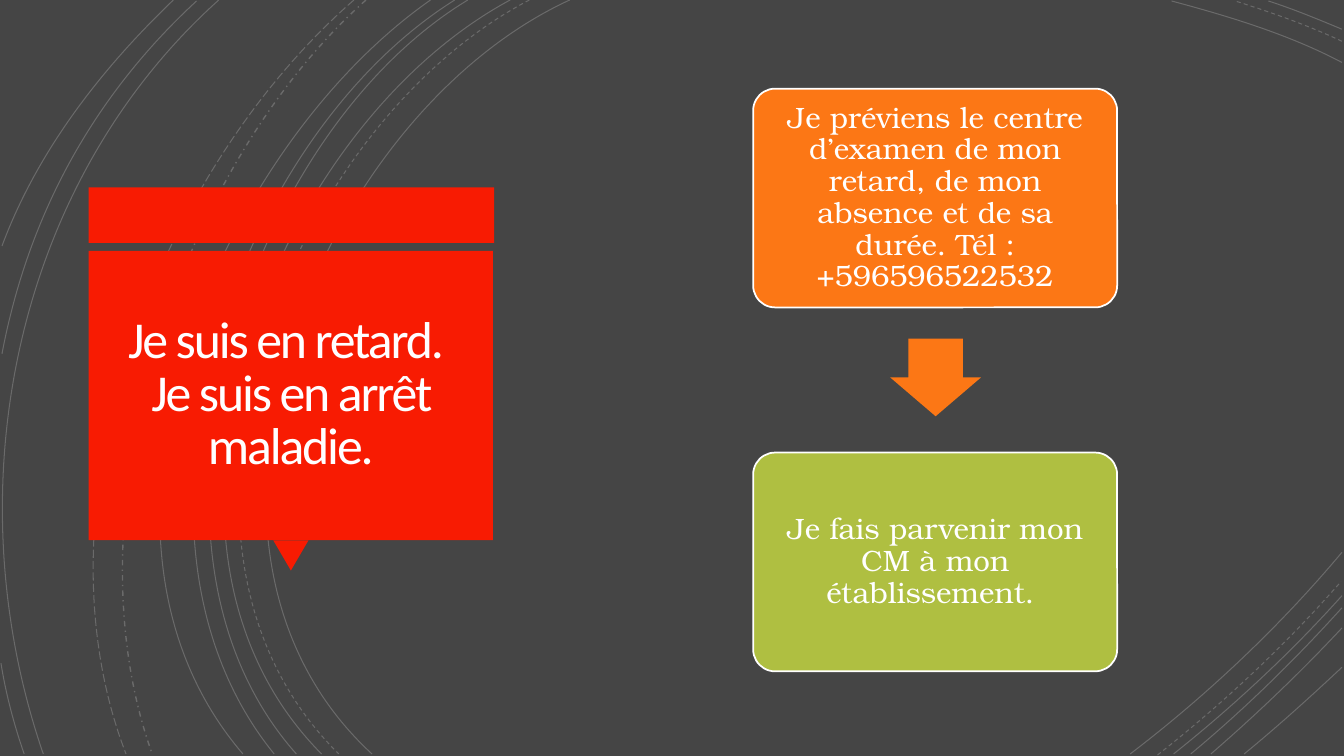
"""Build the slide on being late or on sick leave: a red title and two steps."""
from typing import NamedTuple

import pptx
import pptx.dml.color
import pptx.enum.dml
import pptx.enum.shapes
import pptx.enum.text
import pptx.oxml.ns
import pptx.util
from lxml import etree
from pptx.shapes.autoshape import Shape
from pptx.slide import Slide

Inches = pptx.util.Inches
Pt = pptx.util.Pt
qn = pptx.oxml.ns.qn
SHAPE = pptx.enum.shapes.MSO_SHAPE
DASH = pptx.enum.dml.MSO_LINE

COLORS = {
    "background": "454545",
    "white": "FFFFFF",
    "title": "FFFEFF",
    "red": "F81B02",
    "orange": "FC7715",
    "green": "AFBF41",
}


class Arc(NamedTuple):
    """A Bezier curve: start, two controls and end, in inches."""
    points: tuple[tuple[float, float], ...]
    dash: DASH = DASH.SOLID
    width: float = 0.75


class Block(NamedTuple):
    """A filled preset shape, measured in inches."""
    kind: SHAPE
    left: float
    top: float
    width: float
    height: float
    fill: str
    adjustments: tuple[float, ...] = ()
    rotation: float = 0
    outlined: bool = False


class Step(NamedTuple):
    """One rounded box of the procedure."""
    text: str
    fill: str


ARCS = [
    Arc(((5.65, 0), (3.15, 1.15), (1.43, 5.4), (3.69, 7.48))),
    Arc(((13.31, 0.62), (12.78, 0.34), (12.18, 0.16), (11.62, 0.01))),
    Arc(((11.21, 7.48), (11.97, 6.9), (12.69, 6.22), (13.31, 5.48))),
    Arc(((5.25, 0), (2.85, 1.25), (1.23, 5.37), (3.36, 7.48)), DASH.DASH),
    Arc(((13.31, 0.41), (12.97, 0.25), (12.6, 0.12), (12.25, 0.01)), DASH.DASH),
    Arc(((11.48, 7.49), (12.13, 6.98), (12.75, 6.4), (13.3, 5.77)), DASH.DASH),
    Arc(((5.06, 0), (2.7, 1.27), (1.1, 5.37), (3.19, 7.48))),
    Arc(((13.31, 0.29), (13.07, 0.19), (12.83, 0.09), (12.58, 0.01))),
    Arc(((11.64, 7.48), (12.23, 7.01), (12.8, 6.48), (13.31, 5.91))),
    Arc(((4.64, 0), (2.44, 1.33), (1.1, 5.41), (2.94, 7.48))),
    Arc(((11.81, 7.48), (12.34, 7.04), (12.84, 6.55), (13.31, 6.03))),
    Arc(((4.51, 0), (2.31, 1.38), (0.97, 5.33), (2.72, 7.48))),
    Arc(((12.01, 7.48), (12.46, 7.09), (12.9, 6.67), (13.31, 6.23))),
    Arc(((4.27, 0), (2.17, 1.47), (0.53, 5.29), (2.41, 7.48))),
    Arc(((12.34, 7.48), (12.67, 7.21), (12.99, 6.92), (13.31, 6.62))),
    Arc(((3.63, 0), (1.76, 1.66), (0.65, 5.09), (1.51, 7.48)), DASH.DASH_DOT, 1),
    Arc(((3.51, 0), (1.57, 1.69), (0.29, 4.99), (1.25, 7.48)), DASH.LONG_DASH),
    Arc(((2.17, 0), (0.11, 1.85), (-0.46, 4.9), (0.43, 7.48))),
    Arc(((1.95, 0.01), (0.92, 0.96), (0.28, 2.14), (0.02, 3.51))),
    Arc(((0.01, 6.58), (0.06, 6.89), (0.14, 7.19), (0.24, 7.48))),
    Arc(((1.72, 0), (1, 0.69), (0.37, 1.5), (0.02, 2.44))),
]

TITLE_BAND = Block(SHAPE.RECTANGLE, 0.88, 1.86, 4.02, 0.55, "red")
TITLE_POINTER = Block(SHAPE.ISOSCELES_TRIANGLE, 2.71, 5.36, 0.35, 0.3, "red", rotation=180)
TITLE_BOX = Block(SHAPE.RECTANGLE, 0.88, 2.49, 4.01, 2.87, "red")
TITLE = "Je suis en retard. \vJe suis en arrêt maladie."

STEPS = [
    Step("Je préviens le centre d’examen de mon retard, de mon absence et de sa durée. "
         "Tél : +596596522532", "orange"),
    Step("Je fais parvenir mon CM à mon établissement. ", "green"),
]
STEP_TOP, STEP_PITCH = 0.88, 3.61
ARROW = Block(SHAPE.DOWN_ARROW, 8.83, 3.36, 0.9, 0.77, "orange", (0.6, 0.5))


def rgb(name: str) -> pptx.dml.color.RGBColor:
    """Return the named colour."""
    return pptx.dml.color.RGBColor.from_string(COLORS[name])


def draw_arc(slide: Slide, arc: Arc) -> Shape:
    """Draw a faint curved line."""
    start, *rest = [(Inches(x), Inches(y)) for x, y in arc.points]
    builder = slide.shapes.build_freeform(*start)
    builder.add_line_segments(rest, close=False)
    sp = builder.convert_to_shape()
    segments = list(sp.element.iter(qn("a:lnTo")))
    outline = segments[0].getparent()
    curve = etree.SubElement(outline, qn("a:cubicBezTo"))
    for segment in segments:
        curve.append(segment[0])
        outline.remove(segment)
    sp.shadow.inherit = False
    sp.fill.background()
    sp.line.color.rgb = rgb("white")
    sp.line.width = Pt(arc.width)
    sp.line.dash_style = arc.dash
    color = sp.line._get_or_add_ln().find(".//" + qn("a:srgbClr"))
    etree.SubElement(color, qn("a:alpha"), val="20000")
    return sp


def draw_block(slide: Slide, block: Block) -> Shape:
    """Draw a filled shape, with a white outline if asked."""
    sp = slide.shapes.add_shape(
        block.kind, Inches(block.left), Inches(block.top),
        Inches(block.width), Inches(block.height))
    for i, value in enumerate(block.adjustments):
        sp.adjustments[i] = value
    sp.rotation = block.rotation
    sp.shadow.inherit = False
    sp.fill.solid()
    sp.fill.fore_color.rgb = rgb(block.fill)
    if block.outlined:
        sp.line.color.rgb = rgb("white")
        sp.line.width = Pt(1.25)
    else:
        sp.line.fill.background()
    return sp


def write_text(sp: Shape, text: str, *, font: str, size: float, color: str,
               line_spacing: float, inset: float, tracking: float = 0) -> None:
    """Write a centred paragraph in a shape."""
    tf = sp.text_frame
    tf.word_wrap = True
    tf.vertical_anchor = pptx.enum.text.MSO_ANCHOR.MIDDLE
    tf.margin_left = tf.margin_right = Inches(inset)
    tf.margin_top = tf.margin_bottom = Inches(inset)
    p = tf.paragraphs[0]
    p.text = text
    p.alignment = pptx.enum.text.PP_ALIGN.CENTER
    p.line_spacing = line_spacing
    for r in p.runs:
        r.font.name = font
        r.font.size = Pt(size)
        r.font.color.rgb = rgb(color)
        if tracking:
            r.font._element.set("spc", str(round(tracking * 100)))


def main() -> None:
    """Build and save the slide."""
    prs = pptx.Presentation()
    prs.slide_width, prs.slide_height = Inches(13.33), Inches(7.5)
    slide = prs.slides.add_slide(prs.slide_layouts[6])
    slide.background.fill.solid()
    slide.background.fill.fore_color.rgb = rgb("background")

    for arc in ARCS:
        draw_arc(slide, arc)

    draw_block(slide, TITLE_BAND)
    draw_block(slide, TITLE_POINTER)
    write_text(draw_block(slide, TITLE_BOX), TITLE, font="Calibri", size=37,
               color="title", line_spacing=0.85, inset=0.34, tracking=-1.5)

    for i, step in enumerate(STEPS):
        box = Block(SHAPE.ROUNDED_RECTANGLE, 7.47, STEP_TOP + i * STEP_PITCH, 3.61, 2.17,
                    step.fill, (0.1,), outlined=True)
        write_text(draw_block(slide, box), step.text, font="TeX Gyre Bonum", size=21,
                   color="white", line_spacing=0.9, inset=0.09)
    draw_block(slide, ARROW)

    prs.save("out.pptx")


if __name__ == "__main__":
    main()
